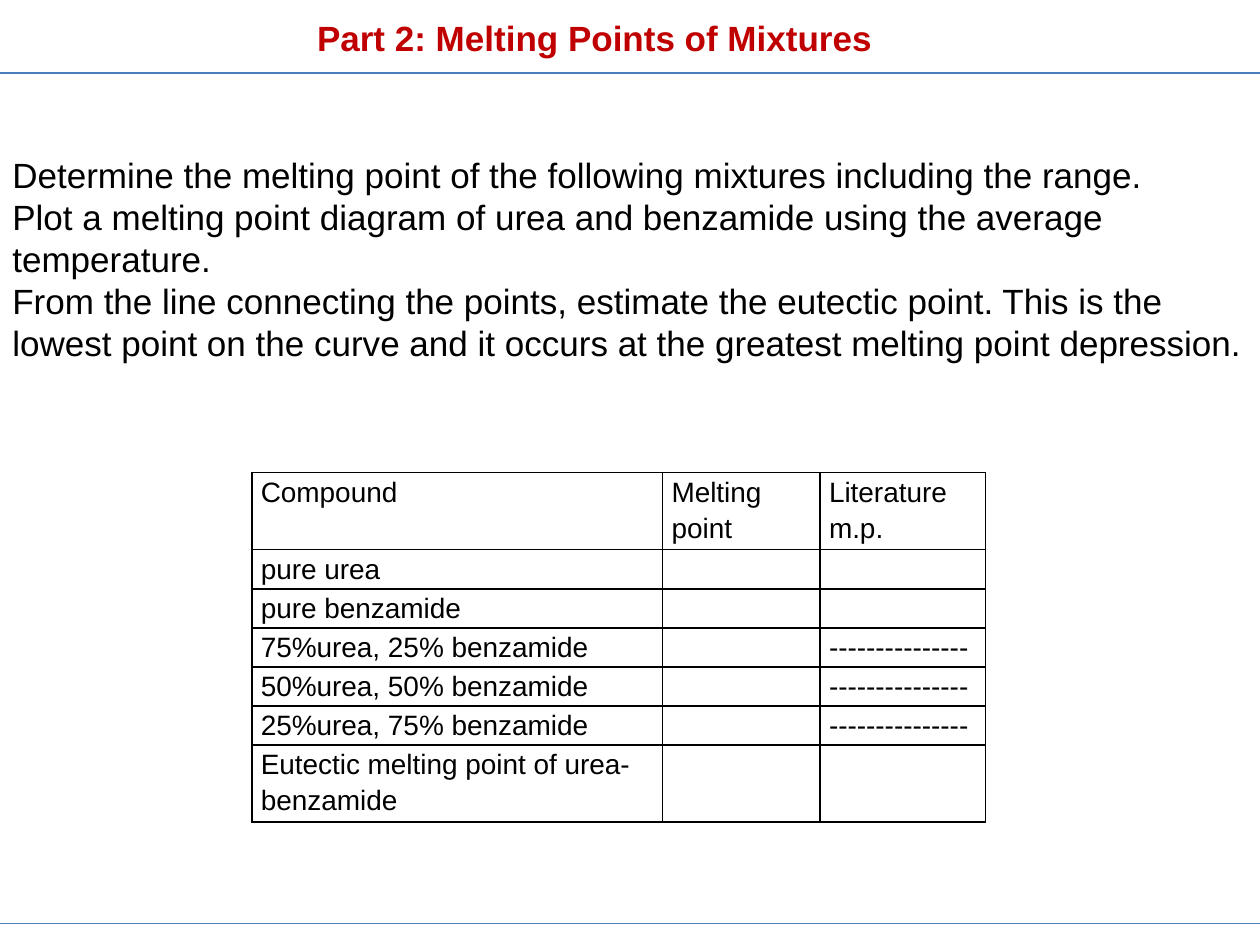
from lxml import etree
from pptx import Presentation
from pptx.dml.color import RGBColor
from pptx.enum.shapes import MSO_CONNECTOR
from pptx.enum.text import MSO_ANCHOR, PP_ALIGN
from pptx.oxml.ns import qn
from pptx.util import Inches, Pt

STRAIGHT = MSO_CONNECTOR.STRAIGHT
MIDDLE, TOP = MSO_ANCHOR.MIDDLE, MSO_ANCHOR.TOP
LEFT, CENTER = PP_ALIGN.LEFT, PP_ALIGN.CENTER
BLACK = RGBColor(0x00, 0x00, 0x00)
RED = RGBColor(0xC0, 0x00, 0x00)
BLUE = RGBColor(0x4B, 0x7E, 0xBC)

# Content
TITLE = "Part 2: Melting Points of Mixtures"
STEPS = [
    "Determine the melting point of the following mixtures including the range.",
    "Plot a melting point diagram of urea and benzamide using the average temperature.",
    "From the line connecting the points, estimate the eutectic point. This is the "
    "lowest point on the curve and it occurs at the greatest melting point depression.",
]
NO_VALUE = "-" * 15
ROWS = [
    ("Compound", "Melting point", "Literature m.p."),
    ("pure urea", "", ""),
    ("pure benzamide", "", ""),
    ("75%urea, 25% benzamide", "", NO_VALUE),
    ("50%urea, 50% benzamide", "", NO_VALUE),
    ("25%urea, 75% benzamide", "", NO_VALUE),
    ("Eutectic melting point of urea-benzamide", "", ""),
]

# Layout in inches
WIDTH, HEIGHT = 10, 7.5
COLUMNS = (3.26, 1.25, 1.31)
ONE_LINE, TWO_LINES = 0.31, 0.61
ROW_HEIGHTS = [TWO_LINES] + [ONE_LINE] * (len(ROWS) - 2) + [TWO_LINES]
RULES = (0.58, 7.33)

TITLE_FONT = {"name": "Arial", "size": Pt(20), "bold": True}
BODY_FONT = {"name": "Arial", "size": Pt(20)}
CELL_FONT = {"name": "Arial", "size": Pt(16)}


def set_all(target, values):
    for name, value in values.items():
        setattr(target, name, value)


def write(tf, lines, font, color, align=LEFT, spacing=None):
    for i, line in enumerate(lines):
        p = tf.add_paragraph() if i else tf.paragraphs[0]
        set_all(p, {"alignment": align, "line_spacing": spacing})
        r = p.add_run()
        r.text = line
        set_all(r.font, font)
        r.font.color.rgb = color


def add_text(s, box, lines, font, color, align=LEFT, **frame):
    tf = s.shapes.add_textbox(*map(Inches, box)).text_frame
    set_all(tf, frame)
    write(tf, lines, font, color, align)


def add_borders(cell):
    tcPr = cell._tc.get_or_add_tcPr()
    for i, side in enumerate(("lnL", "lnR", "lnT", "lnB")):
        ln = etree.Element(qn(f"a:{side}"), w=str(Pt(1)))
        fill = etree.SubElement(ln, qn("a:solidFill"))
        etree.SubElement(fill, qn("a:srgbClr"), val=str(BLACK))
        tcPr.insert(i, ln)


def add_table(s):
    size = (sum(COLUMNS), sum(ROW_HEIGHTS))
    frame = s.shapes.add_table(len(ROWS), len(COLUMNS),
                               *map(Inches, (2, 3.75, *size)))
    table = frame.table
    set_all(table, {"first_row": False, "horz_banding": False})
    for column, width in zip(table.columns, COLUMNS):
        column.width = Inches(width)
    for row, height, texts in zip(table.rows, ROW_HEIGHTS, ROWS):
        row.height = Inches(height)
        for cell, text in zip(row.cells, texts):
            set_all(cell, {"margin_left": Inches(0.07), "margin_right": Inches(0.07),
                           "margin_top": 0, "margin_bottom": 0})
            cell.fill.background()
            add_borders(cell)
            if text:
                write(cell.text_frame, [text], CELL_FONT, BLACK, spacing=1.15)


def add_rule(s, y):
    line = s.shapes.add_connector(STRAIGHT, 0, Inches(y), Inches(WIDTH), Inches(y))
    line.line.color.rgb = BLUE
    line.line.width = Pt(0.75)
    etree.SubElement(line._element.spPr, qn("a:effectLst"))


def main():
    prs = Presentation()
    prs.slide_width, prs.slide_height = Inches(WIDTH), Inches(HEIGHT)
    s = prs.slides.add_slide(prs.slide_layouts[6])

    # Instructions, with room left below them
    add_text(s, (0, 1.16, WIDTH, 2.09), STEPS, BODY_FONT, BLACK, word_wrap=True,
             vertical_anchor=MIDDLE, margin_bottom=Inches(0.35))
    # Results table
    add_table(s)
    # Heading and the rules at top and bottom
    add_text(s, (2.4, 0.08, 4.64, 0.44), [TITLE], TITLE_FONT, RED, CENTER,
             word_wrap=False, vertical_anchor=TOP)
    for y in RULES:
        add_rule(s, y)

    prs.save("out.pptx")


if __name__ == "__main__":
    main()
